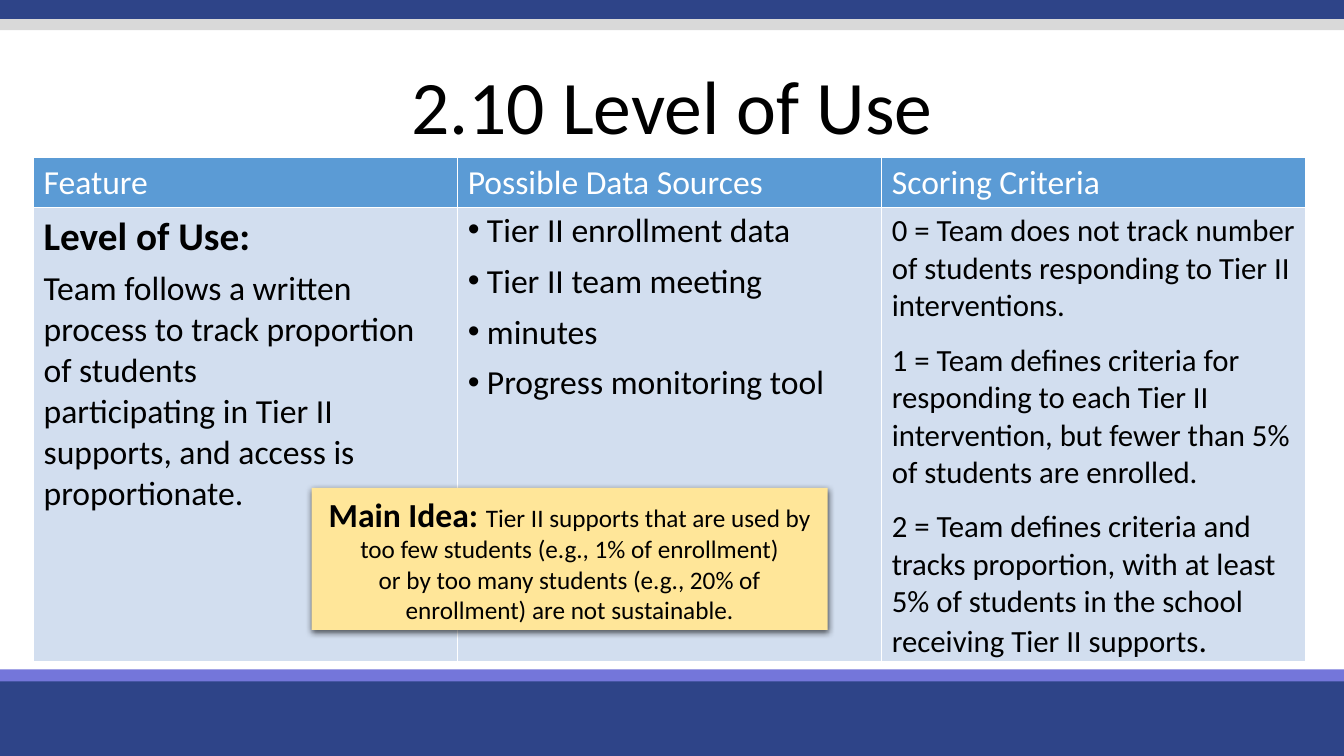
"""Build the 2.10 Level of Use slide: bands, title, criteria table and main idea."""
from lxml.etree import SubElement
from pptx import Presentation
from pptx.dml.color import RGBColor
from pptx.enum.shapes import MSO_SHAPE
from pptx.enum.text import MSO_ANCHOR, MSO_AUTO_SIZE, PP_ALIGN
from pptx.oxml import parse_xml
from pptx.oxml.ns import nsdecls, qn
from pptx.util import Inches, Pt

NAVY = RGBColor(0x2E, 0x44, 0x88)
GREY = RGBColor(0xD9, 0xD9, 0xD9)
VIOLET = RGBColor(0x74, 0x76, 0xDA)
BLUE = RGBColor(0x5B, 0x9B, 0xD5)
PALE = RGBColor(0xD2, 0xDE, 0xEF)
YELLOW = RGBColor(0xFF, 0xE6, 0x99)
BLACK = RGBColor(0, 0, 0)
WHITE = RGBColor(0xFF, 0xFF, 0xFF)

prs = Presentation()
prs.slide_width, prs.slide_height = Inches(13.33), Inches(7.5)
s = prs.slides.add_slide(prs.slide_layouts[6])


def area(x, y, w, h):
    """Turn percentages of the slide into a left, top, width and height."""
    sides = (prs.slide_width, prs.slide_height) * 2
    return [int(side * share / 100) for side, share in zip(sides, (x, y, w, h))]


def style(p, size, color=BLACK, bold=False):
    """Format every run of a paragraph."""
    for r in p.runs:
        r.font.name, r.font.size, r.font.bold = "Calibri", Pt(size), bold
        r.font.color.rgb = color


for top, height, color in [(0, 2.53, NAVY), (2.53, 1.47, GREY),
                           (89.33, 10.67, NAVY), (88.53, 1.6, VIOLET)]:
    band = s.shapes.add_shape(MSO_SHAPE.RECTANGLE, *area(0, top, 100, height))
    band.shadow.inherit = False
    band.fill.solid()
    band.fill.fore_color.rgb = color
    band.line.fill.background()

tf = s.shapes.add_textbox(*area(0, 3.07, 100, 22.93)).text_frame
tf.word_wrap = True
tf.vertical_anchor = MSO_ANCHOR.MIDDLE
tf.text = "2.10 Level of Use"
p = tf.paragraphs[0]
p.alignment = PP_ALIGN.CENTER
p.line_spacing = 0.9
style(p, 54)

rows = [
    ["Feature", "Possible Data Sources", "Scoring Criteria"],
    ["Level of Use:\n"
     "Team follows a written process to track proportion of students\n"
     "participating in Tier II supports, and access is proportionate.",
     "Tier II enrollment data\nTier II team meeting\nminutes\nProgress monitoring tool",
     "0 = Team does not track number of students responding to Tier II interventions.\n"
     "1 = Team defines criteria for responding to each Tier II intervention, "
     "but fewer than 5% of students are enrolled.\n"
     "2 = Team defines criteria and tracks proportion, with at least 5% of students "
     "in the school receiving Tier II supports"],
]
table = s.shapes.add_table(2, 3, *area(2.5, 20.8, 94.67, 65.33)).table
for row, share in zip(table.rows, (6.13, 59.2)):
    row.height = int(prs.slide_height * share / 100)

for i, texts in enumerate(rows):
    for j, text in enumerate(texts):
        cell = table.cell(i, j)
        cell.fill.solid()
        cell.fill.fore_color.rgb = PALE if i else BLUE
        cell.vertical_anchor = MSO_ANCHOR.TOP if i else MSO_ANCHOR.MIDDLE
        for k, side in enumerate(("lnL", "lnR", "lnT", "lnB")):
            cell._tc.get_or_add_tcPr().insert(k, parse_xml(
                f'<a:{side} {nsdecls("a")} w="12700"><a:solidFill>'
                f'<a:srgbClr val="{WHITE}"/></a:solidFill></a:{side}>'))
        cell.text_frame.text = text
        for p in cell.text_frame.paragraphs:
            style(p, 22 if i and j == 2 else 24, BLACK if i else WHITE)

feature, sources, criteria = [table.cell(1, j).text_frame.paragraphs for j in range(3)]
style(feature[0], 28, bold=True)
feature[0].space_after = Pt(6)

for k, p in enumerate(sources):
    pPr = p._p.get_or_add_pPr()
    pPr.set("marL", str(Inches(0.19)))
    pPr.set("indent", str(-Inches(0.19)))
    SubElement(pPr, qn("a:buFont"), typeface="Arial")
    SubElement(pPr, qn("a:buChar"), char="•")
    p.line_spacing = 0.9
    if k:
        p.space_before = Pt(10)

for p in criteria[:2]:
    p.space_after = Pt(12)
r = criteria[2].add_run()
r.text = "."
style(criteria[2], 22)
r.font.size = Pt(24)

idea = s.shapes.add_shape(MSO_SHAPE.RECTANGLE, *area(23.18, 64.53, 38.41, 18.8))
idea.fill.solid()
idea.fill.fore_color.rgb = YELLOW
idea.line.fill.background()
idea.shadow.inherit = False
idea._element.spPr.find(qn("a:effectLst")).append(parse_xml(
    f'<a:outerShdw {nsdecls("a")} blurRad="{Pt(4.5)}" dist="{Pt(1.5)}" dir="5400000" '
    'algn="ctr" rotWithShape="0"><a:srgbClr val="000000"><a:alpha val="63000"/>'
    '</a:srgbClr></a:outerShdw>'))
tf = idea.text_frame
tf.word_wrap = True
tf.auto_size = MSO_AUTO_SIZE.SHAPE_TO_FIT_TEXT
tf.vertical_anchor = MSO_ANCHOR.MIDDLE
tf.text = ("Main Idea: \ntoo few students (e.g., 1% of enrollment)\n"
           "or by too many students (e.g., 20% of\nenrollment) are not sustainable.")
tf.paragraphs[0].add_run().text = "Tier II supports that are used by"
for p in tf.paragraphs:
    p.alignment = PP_ALIGN.CENTER
    style(p, 18)
lead = tf.paragraphs[0].runs[0].font
lead.size, lead.bold = Pt(24), True

prs.save("out.pptx")
